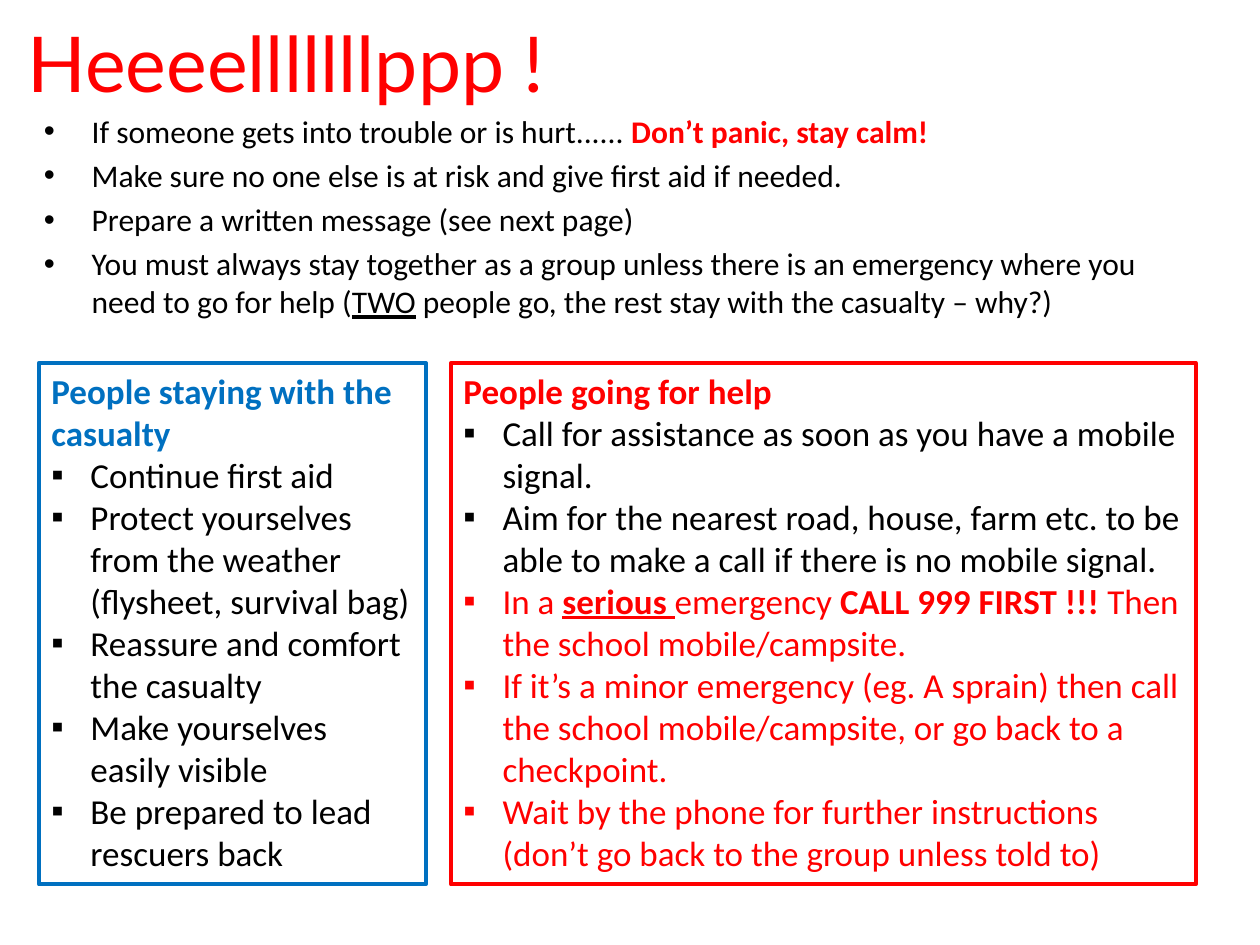
from dataclasses import dataclass

from lxml.etree import SubElement
from pptx import Presentation
from pptx.dml.color import RGBColor
from pptx.enum.shapes import MSO_SHAPE as Shape
from pptx.enum.text import MSO_ANCHOR as Anchor, MSO_AUTO_SIZE as AutoSize, PP_ALIGN as Align
from pptx.oxml.ns import qn
from pptx.util import Inches, Pt

COLORS = {"black": "000000", "red": "FF0000", "blue": "0070C0"}


@dataclass(frozen=True)
class Run:
    text: str
    color: str = "black"
    bold: bool = False
    underline: bool = False


@dataclass(frozen=True)
class TextStyle:
    size: float
    font: str = "Calibri"
    bullet: str = ""
    indent: float = 0
    space_before: float = 0


@dataclass(frozen=True)
class Panel:
    left: float
    width: float
    color: str
    heading: str
    items: list[list[Run]]


TITLE = TextStyle(44, font="Lato")
ADVICE = TextStyle(18, bullet="•", indent=0.38, space_before=3.6)
HEADING = TextStyle(20)
ITEM = TextStyle(20, bullet="▪", indent=0.31)
PANEL_TOP, PANEL_HEIGHT = 2.88, 4.14

ADVICE_ITEMS = [
    [Run("If someone gets into trouble or is hurt...... "),
     Run("Don’t panic, stay calm!", "red", bold=True)],
    [Run("Make sure no one else is at risk and give first aid if needed.")],
    [Run("Prepare a written message (see next page)")],
    [Run("You must always stay together as a group unless there is an emergency "
         "where you need to go for help ("),
     Run("TWO", underline=True),
     Run(" people go, the rest stay with the casualty – why?)")],
]

PANELS = [
    Panel(0.31, 3.07, "blue", "People staying with the casualty", [
        [Run("Continue first aid")],
        [Run("Protect yourselves from the weather (flysheet, survival bag)")],
        [Run("Reassure and comfort the casualty")],
        [Run("Make yourselves easily visible")],
        [Run("Be prepared to lead rescuers back")],
    ]),
    Panel(3.58, 5.91, "red", "People going for help", [
        [Run("Call for assistance as soon as you have a mobile signal.")],
        [Run("Aim for the nearest road, house, farm etc. to be able to make a call "
             "if there is no mobile signal.")],
        [Run("In a ", "red"),
         Run("serious", "red", bold=True, underline=True),
         Run(" ", "red", underline=True),
         Run("emergency ", "red"),
         Run("CALL 999 FIRST !!! ", "red", bold=True),
         Run("Then the school mobile/campsite.", "red")],
        [Run("If it’s a minor emergency (eg. A sprain) then call the school "
             "mobile/campsite, or go back to a checkpoint.", "red")],
        [Run("Wait by the phone for further instructions (don’t go back to the "
             "group unless told to)", "red")],
    ]),
]


def rgb(name: str) -> RGBColor:
    return RGBColor.from_string(COLORS[name])


def set_bullet(p, style: TextStyle) -> None:
    """Give the paragraph a bullet with a hanging indent."""
    pPr = p._p.get_or_add_pPr()
    pPr.set("marL", str(Inches(style.indent)))
    pPr.set("indent", str(-Inches(style.indent)))
    SubElement(pPr, qn("a:buFont")).set("typeface", "Arial")
    SubElement(pPr, qn("a:buChar")).set("char", style.bullet)


def add_paragraphs(tf, paragraphs: list[list[Run]], style: TextStyle) -> None:
    """Append paragraphs, starting with the frame's first one if it is empty."""
    for runs in paragraphs:
        first = tf.paragraphs[0]
        p = tf.add_paragraph() if first.runs else first
        p.alignment = Align.LEFT
        p.space_before = Pt(style.space_before)
        if style.bullet:
            set_bullet(p, style)
        for run in runs:
            r = p.add_run()
            r.text = run.text
            r.font.name = style.font
            r.font.size = Pt(style.size)
            r.font.bold = run.bold
            r.font.underline = run.underline
            r.font.color.rgb = rgb(run.color)


def add_text(s, left: float, top: float, width: float, height: float,
             paragraphs: list[list[Run]], style: TextStyle, anchor=Anchor.TOP) -> None:
    sp = s.shapes.add_textbox(Inches(left), Inches(top), Inches(width), Inches(height))
    tf = sp.text_frame
    tf.word_wrap = True
    tf.vertical_anchor = anchor
    add_paragraphs(tf, paragraphs, style)


def add_panel(s, panel: Panel) -> None:
    sp = s.shapes.add_shape(Shape.RECTANGLE, Inches(panel.left), Inches(PANEL_TOP),
                            Inches(panel.width), Inches(PANEL_HEIGHT))
    sp.shadow.inherit = False
    sp.fill.background()
    sp.line.color.rgb = rgb(panel.color)
    sp.line.width = Pt(2.25)
    tf = sp.text_frame
    tf.word_wrap = True
    tf.auto_size = AutoSize.SHAPE_TO_FIT_TEXT
    tf.vertical_anchor = Anchor.TOP
    add_paragraphs(tf, [[Run(panel.heading, panel.color, bold=True)]], HEADING)
    add_paragraphs(tf, panel.items, ITEM)


def main() -> None:
    prs = Presentation()
    prs.slide_width, prs.slide_height = Inches(10), Inches(7.5)
    s = prs.slides.add_slide(prs.slide_layouts[6])
    add_text(s, 0.12, 0.02, 9, 0.94, [[Run("Heeeelllllllppp !", "red")]], TITLE, Anchor.MIDDLE)
    add_text(s, 0.25, 0.84, 9.24, 1.81, ADVICE_ITEMS, ADVICE)
    for panel in PANELS:
        add_panel(s, panel)
    prs.save("out.pptx")


if __name__ == "__main__":
    main()
